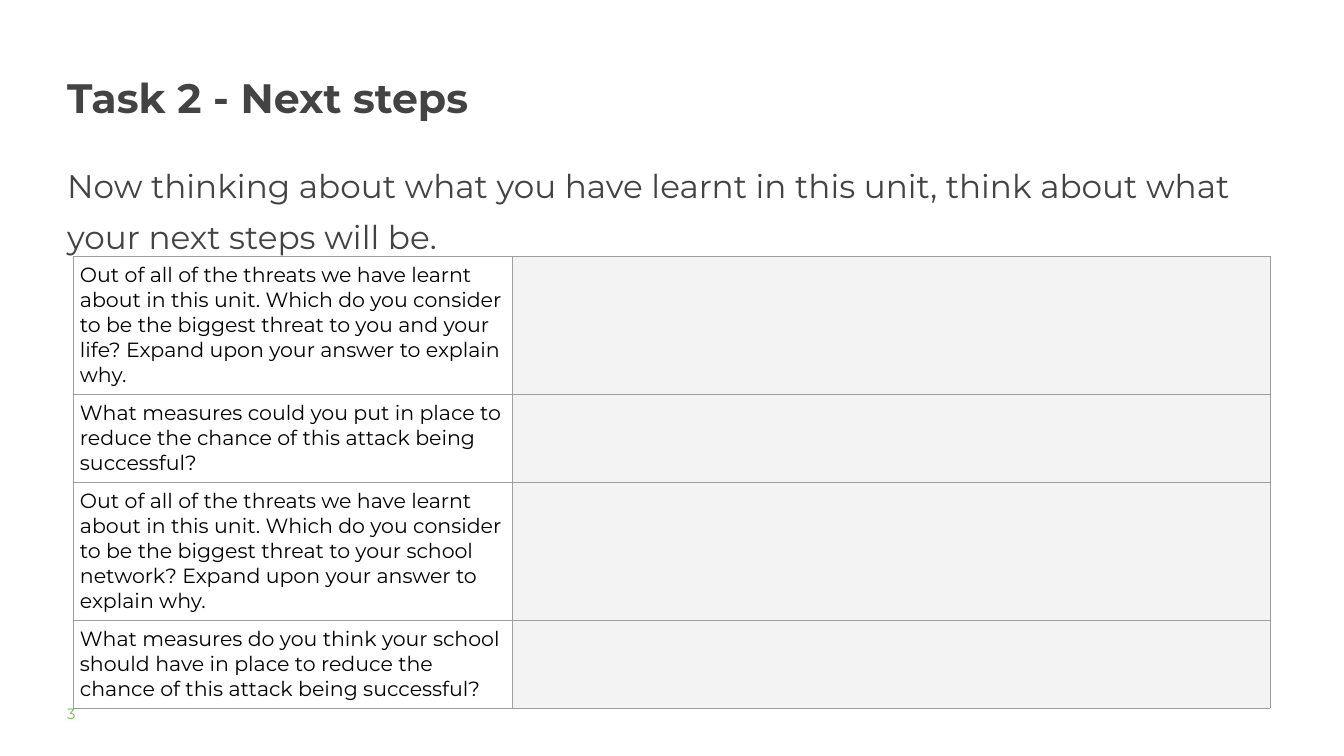
from lxml.etree import SubElement
from pptx import Presentation
from pptx.dml.color import RGBColor
from pptx.enum.text import MSO_ANCHOR
from pptx.oxml.ns import qn
from pptx.util import Pt

FONT = "Montserrat"
DARK = RGBColor(0x43, 0x43, 0x43)
BLACK = RGBColor(0, 0, 0)
GREEN = RGBColor(0x65, 0xBE, 0x4B)
GREY = RGBColor(0xF3, 0xF3, 0xF3)
WHITE = RGBColor(0xFF, 0xFF, 0xFF)
LINE = RGBColor(0x9E, 0x9E, 0x9E)

# text, (left, top, width, height), line spacing, font size, colour, bold
TEXTS = [
    ("Task 2 - Next steps", (72, 70, 622, 128), 1.15, 44, DARK, True),
    ("Now thinking about what you have learnt in this unit, think about "
     "what your next steps will be.",
     (72, 165.6, 1320.5, 121.7), 1.3, 35, DARK, False),
    ("3", (72, 754.5, 113, 28), 1.0, 16, GREEN, False),
]

# question, row height
ROWS = [
    ("Out of all of the threats we have learnt about in this unit. Which do "
     "you consider to be the biggest threat to you and your life? Expand "
     "upon your answer to explain why.", 148),
    ("What measures could you put in place to reduce the chance of this "
     "attack being successful?", 94),
    ("Out of all of the threats we have learnt about in this unit. Which do "
     "you consider to be the biggest threat to your school network? Expand "
     "upon your answer to explain why.", 148),
    ("What measures do you think your school should have in place to reduce "
     "the chance of this attack being successful?", 94),
]
COLS = [470.2, 812.2]
LEFT, TOP = 78.5, 274.4
INSET = 7.2
SIDES = ("left", "top", "right", "bottom")


def style(para, size, color, bold=False):
    form = {"name": FONT, "size": Pt(size), "bold": bold}
    for key, val in form.items():
        setattr(para.font, key, val)
    para.font.color.rgb = color


def pad(item, gap):
    for side in SIDES:
        setattr(item, "margin_" + side, Pt(gap))


def add_text(slide, text, place, space, size, color, bold):
    frame = slide.shapes.add_textbox(*map(Pt, place)).text_frame
    frame.word_wrap = True
    frame.vertical_anchor = MSO_ANCHOR.TOP
    pad(frame, 0)
    para = frame.paragraphs[0]
    para.text = text
    para.line_spacing = space
    style(para, size, color, bold)


def add_edges(cell):
    """Draw the four borders; they must precede the cell's fill in the XML."""
    props = cell._tc.get_or_add_tcPr()
    for tag in ("a:lnL", "a:lnR", "a:lnT", "a:lnB"):
        edge = SubElement(props, qn(tag), w=str(Pt(0.75)))
        fill = SubElement(edge, qn("a:solidFill"))
        SubElement(fill, qn("a:srgbClr"), val=str(LINE))


def add_grid(slide):
    total = sum(high for _, high in ROWS)
    table = slide.shapes.add_table(
        len(ROWS), len(COLS), Pt(LEFT), Pt(TOP), Pt(sum(COLS)), Pt(total)).table
    table.first_row = table.horz_banding = False
    for col, wide in zip(table.columns, COLS):
        col.width = Pt(wide)
    for row, (text, high) in zip(table.rows, ROWS):
        row.height = Pt(high)
        for cell, words, color in zip(row.cells, (text, ""), (WHITE, GREY)):
            pad(cell, INSET)
            add_edges(cell)
            cell.fill.solid()
            cell.fill.fore_color.rgb = color
            para = cell.text_frame.paragraphs[0]
            para.text = words
            style(para, 22, BLACK)


def main():
    deck = Presentation()
    deck.slide_width, deck.slide_height = Pt(1440), Pt(810)
    slide = deck.slides.add_slide(deck.slide_layouts[6])
    for item in TEXTS:
        add_text(slide, *item)
    add_grid(slide)
    deck.save("out.pptx")


if __name__ == "__main__":
    main()
